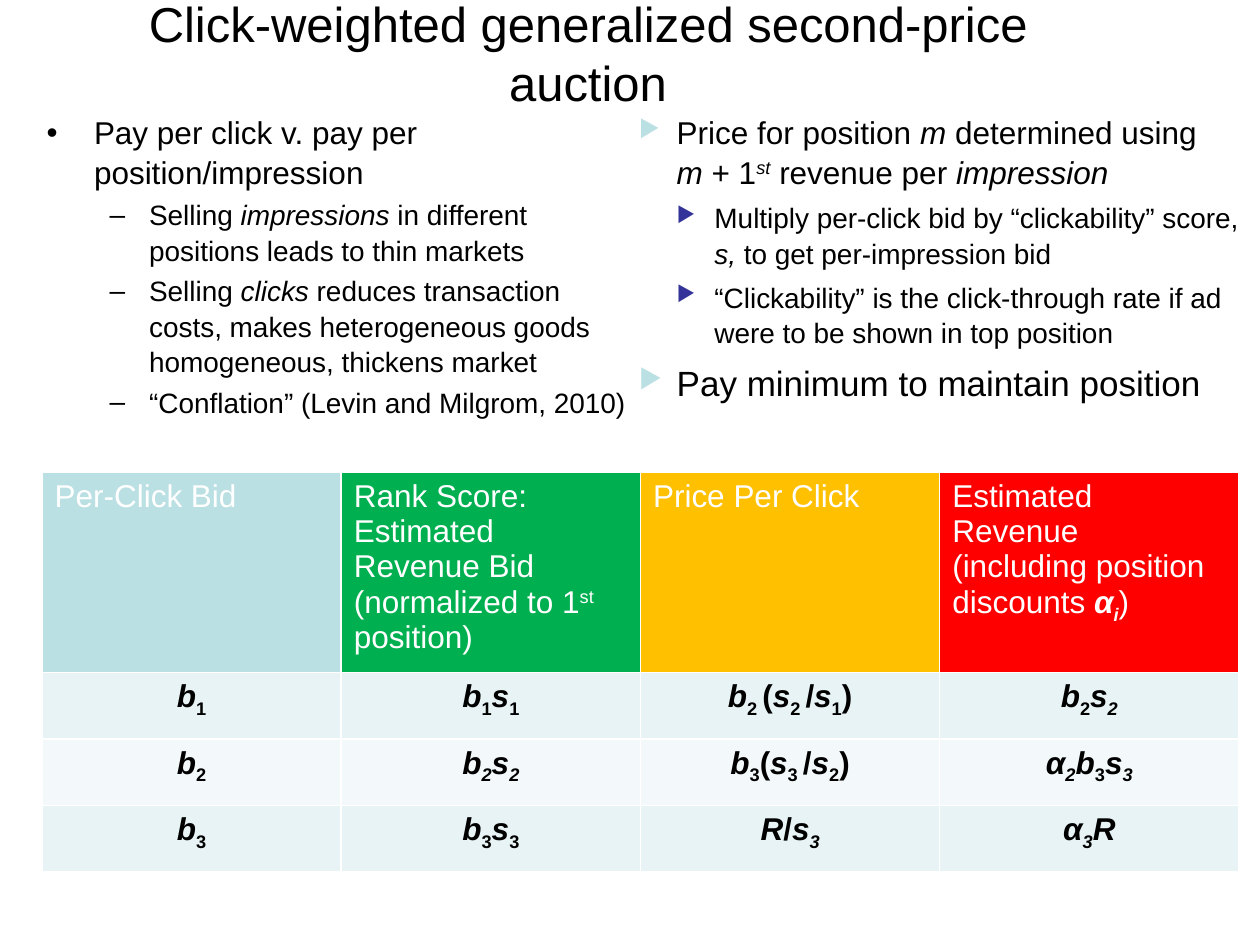
from lxml.etree import SubElement
from pptx import Presentation
from pptx.dml.color import RGBColor
from pptx.enum.text import MSO_ANCHOR, MSO_AUTO_SIZE, PP_ALIGN
from pptx.oxml.ns import qn
from pptx.util import Pt

BLACK, WHITE = "000000", "FFFFFF"
PALE_TEAL, INDIGO = "BBE0E3", "333399"
BASELINES = {"^": "30000", "_": "-25000"}
LINE_BREAK = "<br>"

# Runs are separated by "|"; leading marks: * italic, ! bold, ^ superscript, _ subscript.
TITLE = "Click-weighted generalized second-price auction"
PAYMENT_BASIS = [
    (0, 18, "Pay per click v. pay per position/impression"),
    (1, 16, "Selling |*impressions| in different positions leads to thin markets"),
    (1, 16, "Selling |*clicks| reduces transaction costs, makes heterogeneous "
            "goods homogeneous, thickens market"),
    (1, 16, "“Conflation” (Levin and Milgrom, 2010)"),
]
PRICING_RULE = [
    (0, 18, "Price for position |*m| determined using|<br>|*m| + 1|*^st"
            "| revenue per |*impression"),
    (1, 16, "Multiply per-click bid by “clickability” score, |*s, "
            "|to get per-impression bid"),
    (1, 16, "“Clickability” is the click-through rate if ad were to be shown "
            "in top position"),
    (0, 20, "Pay minimum to maintain position"),
]
HEADERS = [
    (PALE_TEAL, ["Per-Click Bid"]),
    ("00B050", ["Rank Score:", "Estimated Revenue Bid",
                "(normalized to 1|^st| position)"]),
    ("FFC000", ["Price Per Click"]),
    ("FF0000", ["Estimated Revenue",
                "(including position discounts |!*α|!*_i|)"]),
]
FORMULAS = [
    ["*b|_1", "*b|_1|*s|_1", "*b|_2 |(|*s|_2 |/|*s|_1|)", "*b|_2|*s|*_2"],
    ["*b|_2", "*b|*_2|*s|*_2", "*b|_3|(|*s|_3 |/|*s|_2|)", "*α|*_2|*b|_3|*s|*_3"],
    ["*b|_3", "*b|_3|*s|_3", "*R|/|*s|*_3", "*α|*_3|*R"],
]
ROW_FILLS = ["E7F3F4", "F3F9FA", "E7F3F4"]


def rgb(value):
    return RGBColor.from_string(value)


def write_runs(paragraph, markup, size, color=BLACK, bold=False):
    for piece in markup.split("|"):
        if piece == LINE_BREAK:
            paragraph.add_line_break()
            continue
        words = piece.lstrip("*!^_")
        marks = piece[:len(piece) - len(words)]
        run = paragraph.add_run()
        run.text = words
        font_format = {"name": "Arial", "size": Pt(size),
                       "bold": bold or "!" in marks, "italic": "*" in marks}
        for attribute, value in font_format.items():
            setattr(run.font, attribute, value)
        run.font.color.rgb = rgb(color)
        for mark, baseline in BASELINES.items():
            if mark in marks:
                run.font._element.set("baseline", baseline)


def next_paragraph(frame, index):
    return frame.paragraphs[0] if index == 0 else frame.add_paragraph()


def place(shape, left, top, width, height):
    box = {"left": left, "top": top, "width": width, "height": height}
    for attribute, value in box.items():
        setattr(shape, attribute, Pt(value))


def add_arrow_bullet(paragraph, level):
    properties = paragraph._p.get_or_add_pPr()
    properties.set("marL", str(Pt(21.6 * (level + 1))))
    properties.set("indent", str(-Pt(21.6)))
    bullet_color = SubElement(properties, qn("a:buClr"))
    SubElement(bullet_color, qn("a:srgbClr"), val=(PALE_TEAL, INDIGO)[level])
    SubElement(properties, qn("a:buSzPct"), val="76000")
    SubElement(properties, qn("a:buChar"), char="▶")


def write_list(frame, items, arrows=False):
    frame.word_wrap = True
    frame.auto_size = MSO_AUTO_SIZE.NONE
    for index, (level, size, markup) in enumerate(items):
        paragraph = next_paragraph(frame, index)
        paragraph.level = level
        paragraph.line_spacing = 1.05
        if arrows:
            paragraph.space_before = Pt(6 - level)
            add_arrow_bullet(paragraph, level)
        write_runs(paragraph, markup, size)


def write_title(title):
    place(title, 30, 12, 612, 36)
    frame = title.text_frame
    frame.auto_size = MSO_AUTO_SIZE.NONE
    frame.vertical_anchor = MSO_ANCHOR.MIDDLE
    frame.paragraphs[0].alignment = PP_ALIGN.CENTER
    write_runs(frame.paragraphs[0], TITLE, 28)


def fill_cell(cell, fill, lines, color, bold, alignment):
    cell.fill.solid()
    cell.fill.fore_color.rgb = rgb(fill)
    for index, markup in enumerate(lines):
        paragraph = next_paragraph(cell.text_frame, index)
        paragraph.alignment = alignment
        write_runs(paragraph, markup, 18, color, bold)


def add_auction_table(slide):
    auction = slide.shapes.add_table(
        len(FORMULAS) + 1, len(HEADERS), Pt(24), Pt(270), Pt(684), Pt(229)).table
    for index, row in enumerate(auction.rows):
        row.height = Pt(114.4 if index == 0 else 38)
    for column, (fill, lines) in enumerate(HEADERS):
        fill_cell(auction.cell(0, column), fill, lines, WHITE, False, PP_ALIGN.LEFT)
    for row, (fill, formulas) in enumerate(zip(ROW_FILLS, FORMULAS), start=1):
        for column, formula in enumerate(formulas):
            fill_cell(auction.cell(row, column), fill, [formula], BLACK, True,
                      PP_ALIGN.CENTER)


def main():
    presentation = Presentation()
    presentation.slide_width, presentation.slide_height = Pt(720), Pt(540)
    slide = presentation.slides.add_slide(presentation.slide_layouts[1])
    write_title(slide.shapes.title)
    payment = slide.placeholders[1]
    place(payment, 19.5, 60, 352, 192)
    write_list(payment.text_frame, PAYMENT_BASIS)
    add_auction_table(slide)
    pricing = slide.shapes.add_textbox(Pt(358), Pt(60), Pt(359.3), Pt(192))
    write_list(pricing.text_frame, PRICING_RULE, arrows=True)
    presentation.save("out.pptx")


if __name__ == "__main__":
    main()
